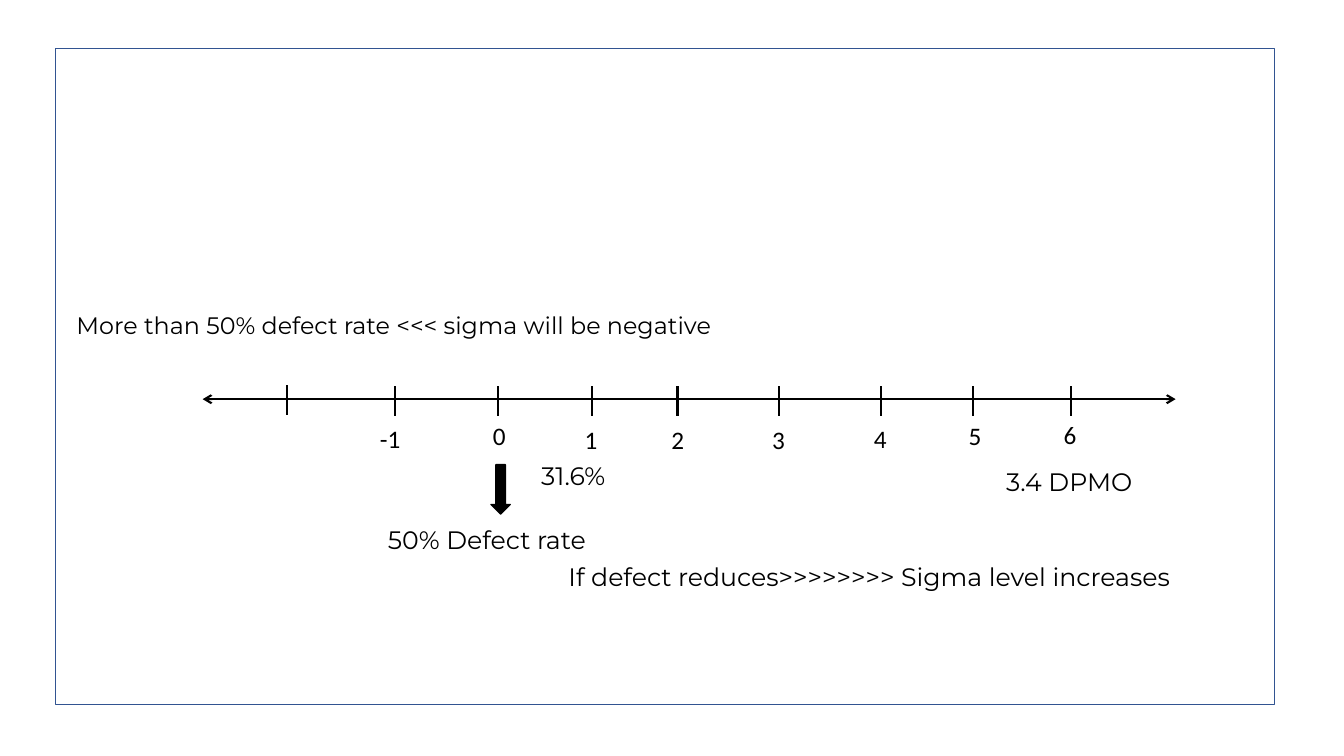
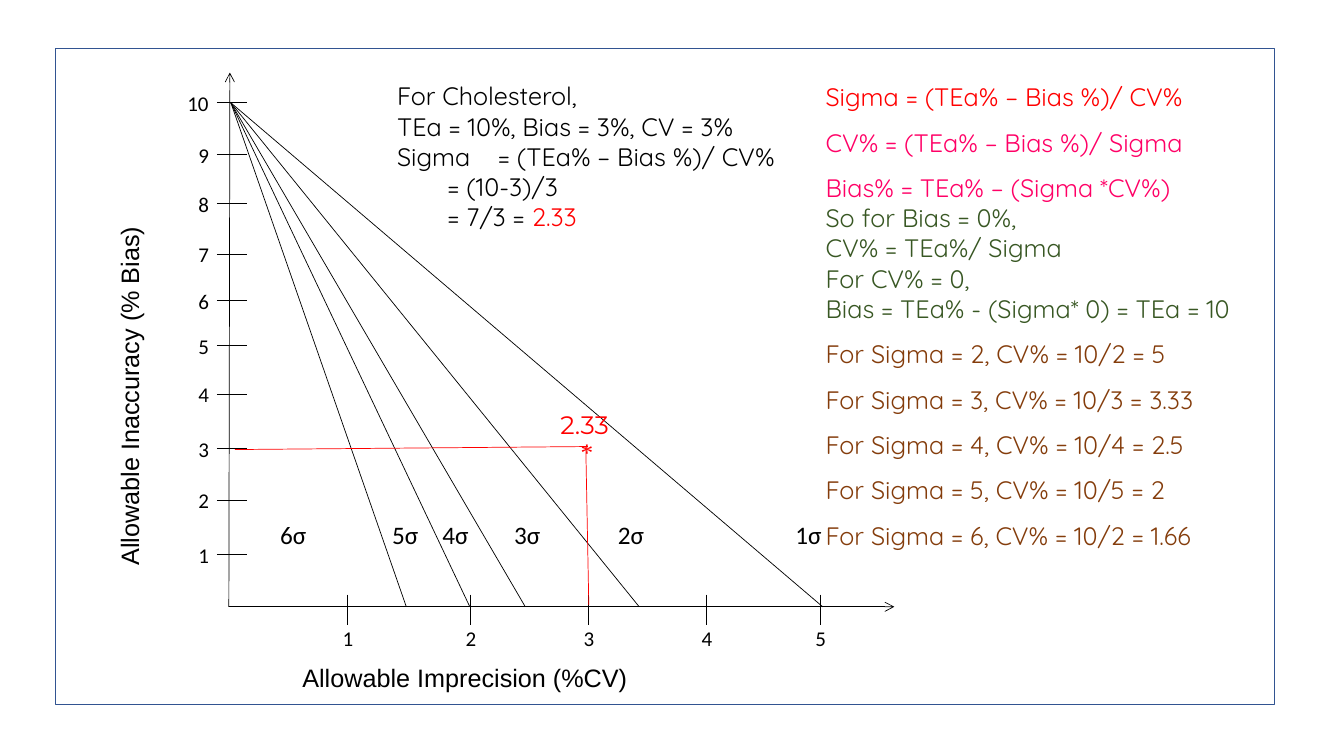
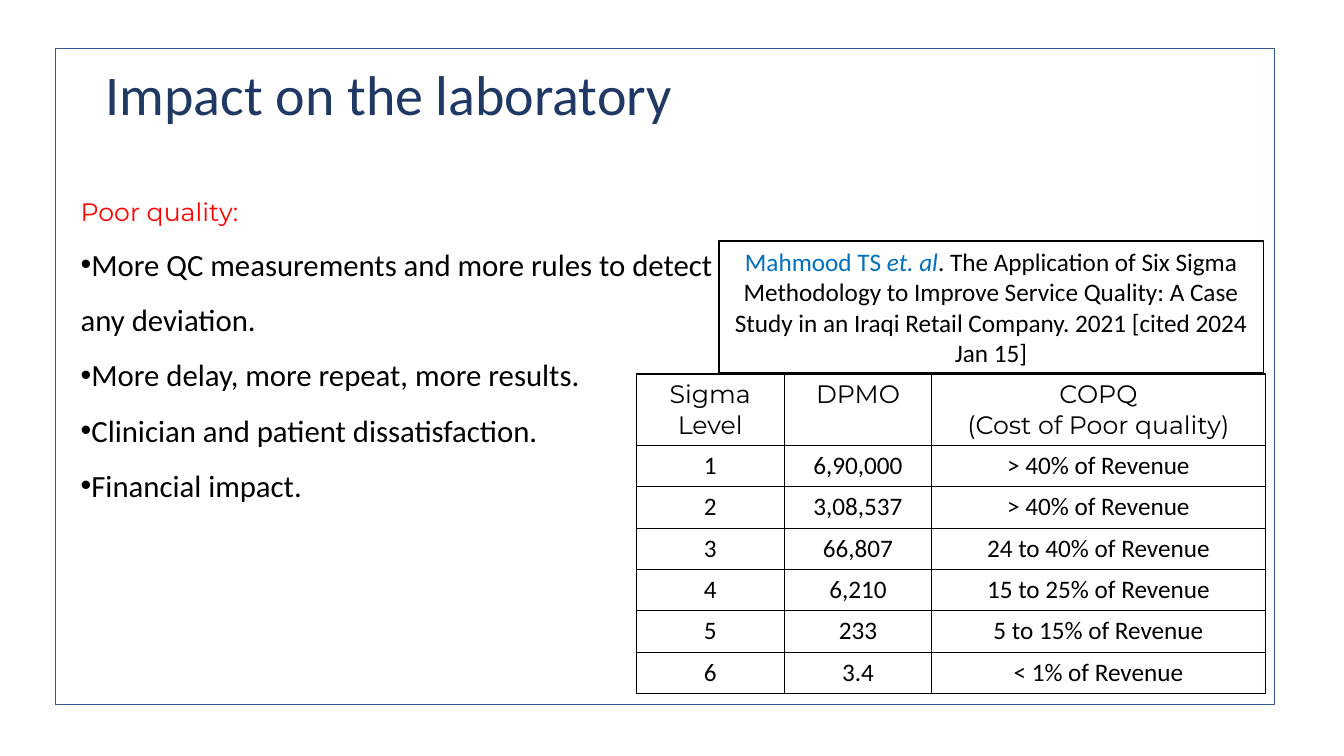
from lxml.etree import SubElement
from pptx import Presentation
from pptx.dml.color import RGBColor
from pptx.enum.shapes import MSO_CONNECTOR, MSO_SHAPE
from pptx.enum.text import MSO_ANCHOR, MSO_AUTO_SIZE, PP_ALIGN
from pptx.oxml.ns import qn
from pptx.util import Inches, Pt

BLACK, WHITE, RED, PINK = "000000", "FFFFFF", "FF0000", "FF0066"
GREEN, BROWN, NAVY, BLUE, FRAME = "385723", "843C0B", "203864", "0070C0", "325491"
BODY, ACCENT, FORMULA = "Calibri", "Montserrat", "Quicksand"


def add_run(para, text, size, font, color=BLACK):
    span = para.add_run()
    span.text = text
    span.font.size = Pt(size)
    span.font.name = font
    span.font.color.rgb = RGBColor.from_string(color)
    return span


def add_line(page, start, end, width, color=BLACK, arrows=()):
    line = page.shapes.add_connector(
        MSO_CONNECTOR.STRAIGHT, *[Inches(value) for value in (*start, *end)])
    line.line.width = Pt(width)
    line.line.color.rgb = RGBColor.from_string(color)
    for arrow in arrows:
        SubElement(line.line._get_or_add_ln(), qn(f"a:{arrow}"), type="arrow")
    SubElement(line._element.spPr, qn("a:effectLst"))


deck = Presentation()
deck.slide_width = Inches(13.33)
deck.slide_height = Inches(7.5)
scale_page, chart_page, impact_page = [
    deck.slides.add_slide(deck.slide_layouts[index]) for index in (6, 6, 1)]

boxes = [
    (scale_page, MSO_SHAPE.DOWN_ARROW, (4.87, 4.61, 0.19, 0.49), BLACK, BLACK),
    (impact_page, MSO_SHAPE.RECTANGLE, (7.13, 2.39, 5.4, 1.31), WHITE, BLACK)]
boxes += [(page, MSO_SHAPE.RECTANGLE, (0.55, 0.48, 12.09, 6.51), None, FRAME)
          for page in deck.slides]
for page, kind, place, fill, outline in boxes:
    box = page.shapes.add_shape(kind, *[Inches(value) for value in place])
    box.shadow.inherit = False
    box.line.width = Pt(1)
    box.line.color.rgb = RGBColor.from_string(outline)
    if fill:
        box.fill.solid()
        box.fill.fore_color.rgb = RGBColor.from_string(fill)
    else:
        box.fill.background()
    if fill == WHITE:
        citation = box.text_frame

labels = [
    (scale_page, (3.75, 5.15, 2.46, 0.4), "50% Defect rate", 18, ACCENT, BLACK),
    (scale_page, (5.27, 4.52, 1.4, 0.4), "31.6%", 18, ACCENT, BLACK),
    (scale_page, (9.88, 4.58, 1.64, 0.4), "3.4 DPMO", 18, ACCENT, BLACK),
    (scale_page, (0.66, 3.03, 7.25, 0.39),
     "More than 50% defect rate <<< sigma will be negative", 17, ACCENT, BLACK),
    (scale_page, (5.54, 5.52, 6.97, 0.4),
     "If defect reduces>>>>>>>> Sigma level increases", 18, ACCENT, BLACK),
    (chart_page, (2.9, 6.52, 5.09, 0.4), "Allowable Imprecision (%CV)", 18, "Arial", BLACK),
    (chart_page, (5.66, 4.28, 0.46, 0.4), "*", 18, "Times New Roman", RED),
    (chart_page, (5.46, 4.01, 1.45, 0.4), "2.33", 18, ACCENT, RED)]

add_line(scale_page, (2.01, 3.96), (11.66, 3.96), 1.5, arrows=("headEnd", "tailEnd"))
add_line(scale_page, (2.85, 3.82), (2.85, 4.12), 1.5)
scale = [("-1", 3.92, 3.67, 4.15), ("0", 4.94, 4.79, 4.12), ("1", 5.87, 5.7, 4.16),
         ("2", 6.72, 6.56, 4.16), ("3", 7.73, 7.56, 4.16), ("4", 8.74, 8.57, 4.15),
         ("5", 9.65, 9.51, 4.12), ("6", 10.62, 10.45, 4.11)]
for text, x, left, top in scale:
    add_line(scale_page, (x, 3.83), (x, 4.13), 1.5)
    labels.append((scale_page, (left, top, 0.5, 0.4), text, 18, BODY, BLACK))

add_line(chart_page, (2.27, 6.02), (8.87, 6.02), 0.5, arrows=("tailEnd",))
add_line(chart_page, (2.27, 6.02), (2.28, 0.72), 0.5, arrows=("tailEnd",))
for number, x in enumerate((3.45, 4.67, 5.84, 7.01, 8.14), 1):
    add_line(chart_page, (x, 5.9), (x, 6.2), 0.5)
    labels.append((chart_page, (x - 0.15, 6.16, 0.34, 0.35), str(number), 15, BODY, BLACK))
bias_ticks = (5.5, 4.96, 4.45, 3.91, 3.43, 2.98, 2.52, 2.02, 1.53, 1.02)
for number, y in enumerate(bias_ticks, 1):
    add_line(chart_page, (2.15, y), (2.45, y), 0.5)
    left, width = (1.76, 0.47) if number == 10 else (1.87, 0.34)
    labels.append((chart_page, (left, y - 0.17, width, 0.35), str(number), 15, BODY, BLACK))
for x in (8.16, 6.34, 5.21, 4.66, 4.03):
    add_line(chart_page, (2.29, 1.02), (x, 6.02), 0.5)
for sigma, left in enumerate((7.79, 6.03, 5, 4.29, 3.79, 2.68), 1):
    labels.append((chart_page, (left, 5.1, 0.7, 0.42), f"{sigma}σ", 18, BODY, BLACK))
add_line(chart_page, (2.33, 4.46), (5.83, 4.43), 0.5, RED)
add_line(chart_page, (5.84, 6), (5.81, 4.43), 0.5, RED)

for page, place, text, size, font, color in labels:
    box = page.shapes.add_textbox(*[Inches(value) for value in place])
    box.text_frame.word_wrap = True
    add_run(box.text_frame.paragraphs[0], text, size, font, color)

bias_title = chart_page.shapes.add_textbox(
    Inches(-1.03), Inches(3.18), Inches(4.64), Inches(0.42))
bias_title.rotation = 270
bias_title.text_frame.word_wrap = True
add_run(bias_title.text_frame.paragraphs[0], "Allowable Inaccuracy (% Bias)", 18, "Arial")

example = [
    (1, [("For Cholesterol,", BLACK)]),
    (1, [("TEa = 10%, Bias = 3%, CV = 3%", BLACK)]),
    (1, [("Sigma \t= (TEa% – Bias %)/ CV%", BLACK)]),
    (1, [("\t= (10-3)/3", BLACK)]),
    (1, [("\t= 7/3 = ", BLACK), ("2.33", RED)])]
formulas = [
    (1, [("Sigma = (TEa% – Bias %)/ CV%", RED)]),
    (1.5, [("CV% = (TEa% – Bias %)/ Sigma", PINK)]),
    (1.5, [("Bias% = TEa% – (Sigma *CV%)", PINK)]),
    (1, [("So for Bias = 0%,", GREEN)]),
    (1, [("CV% = TEa%/ Sigma", GREEN)]),
    (1, [("For CV% = 0,", GREEN)]),
    (1, [("Bias = TEa% - (Sigma* 0) = TEa = 10", GREEN)])]
for result in ("2, CV% = 10/2 = 5", "3, CV% = 10/3 = 3.33", "4, CV% = 10/4 = 2.5",
               "5, CV% = 10/5 = 2", "6, CV% = 10/2 = 1.66"):
    formulas.append((1.5, [(f"For Sigma = {result}", BROWN)]))
for place, rows in (((3.84, 0.75, 5.63, 1.62), example), ((8.09, 0.76, 4.54, 4.8), formulas)):
    frame = chart_page.shapes.add_textbox(*[Inches(value) for value in place]).text_frame
    frame.word_wrap = True
    for index, (spacing, spans) in enumerate(rows):
        para = frame.add_paragraph() if index else frame.paragraphs[0]
        para.line_spacing = float(spacing)
        for text, color in spans:
            add_run(para, text, 18, FORMULA, color)

title, body = impact_page.placeholders
for holder, place in ((title, (0.95, 0.24, 11.5, 1.45)), (body, (0.7, 1.9, 6.51, 3.18))):
    holder.left, holder.top, holder.width, holder.height = [Inches(value) for value in place]
    holder.text_frame.auto_size = MSO_AUTO_SIZE.NONE
title.text_frame.vertical_anchor = MSO_ANCHOR.MIDDLE
title_para = title.text_frame.paragraphs[0]
title_para.alignment = PP_ALIGN.LEFT
title_para.line_spacing = 0.9
add_run(title_para, "Impact on the laboratory", 40, BODY, NAVY)

points = ["Poor quality:",
          "More QC measurements and more rules to detect any deviation.",
          "More delay, more repeat, more results.",
          "Clinician and patient dissatisfaction.",
          "Financial impact."]
for index, text in enumerate(points):
    para = body.text_frame.add_paragraph() if index else body.text_frame.paragraphs[0]
    para.line_spacing = 1.5 if index else 1.0
    para.space_before = Pt(0)
    properties = para._p.get_or_add_pPr()
    properties.set("marL", "0")
    properties.set("indent", "0")
    if index:
        SubElement(properties, qn("a:buChar"), char="•")
        add_run(para, text, 22, BODY)
    else:
        SubElement(properties, qn("a:buNone"))
        add_run(para, text, 18, ACCENT, RED)

citation.word_wrap = True
citation.vertical_anchor = MSO_ANCHOR.MIDDLE
para = citation.paragraphs[0]
para.alignment = PP_ALIGN.CENTER
add_run(para, "Mahmood TS ", 18, BODY, BLUE)
add_run(para, "et. al", 18, BODY, BLUE).font.italic = True
add_run(para, ". The Application of Six Sigma Methodology to Improve Service Quality: "
        "A Case Study in an Iraqi Retail Company. 2021 [cited 2024 Jan 15]", 18, BODY)

costs = [("Sigma Level", "DPMO", "COPQ\n(Cost of Poor quality)"),
         ("1", "6,90,000", "> 40% of Revenue"),
         ("2", "3,08,537", "> 40% of Revenue"),
         ("3", "66,807", "24 to 40% of Revenue"),
         ("4", "6,210", "15 to 25% of Revenue"),
         ("5", "233", "5 to 15% of Revenue"),
         ("6", "3.4", "< 1% of Revenue")]
table = impact_page.shapes.add_table(
    len(costs), 3, Inches(6.31), Inches(3.71), Inches(6.24), Inches(3.16)).table
for column, width in zip(table.columns, (1.47, 1.46, 3.31)):
    column.width = Inches(width)
for row_index, values in enumerate(costs):
    table.rows[row_index].height = Inches(0.41 if row_index else 0.7)
    for column_index, value in enumerate(values):
        cell = table.cell(row_index, column_index)
        for line_index, text in enumerate(value.split("\n")):
            frame = cell.text_frame
            para = frame.add_paragraph() if line_index else frame.paragraphs[0]
            para.alignment = PP_ALIGN.CENTER
            add_run(para, text, 18, BODY if row_index else ACCENT).font.bold = False
        properties = cell._tc.get_or_add_tcPr()
        for side in ("lnL", "lnR", "lnT", "lnB"):
            border = SubElement(properties, qn(f"a:{side}"), w=str(Pt(1)))
            SubElement(SubElement(border, qn("a:solidFill")), qn("a:srgbClr"), val=BLACK)
        cell.fill.background()

deck.save("out.pptx")
